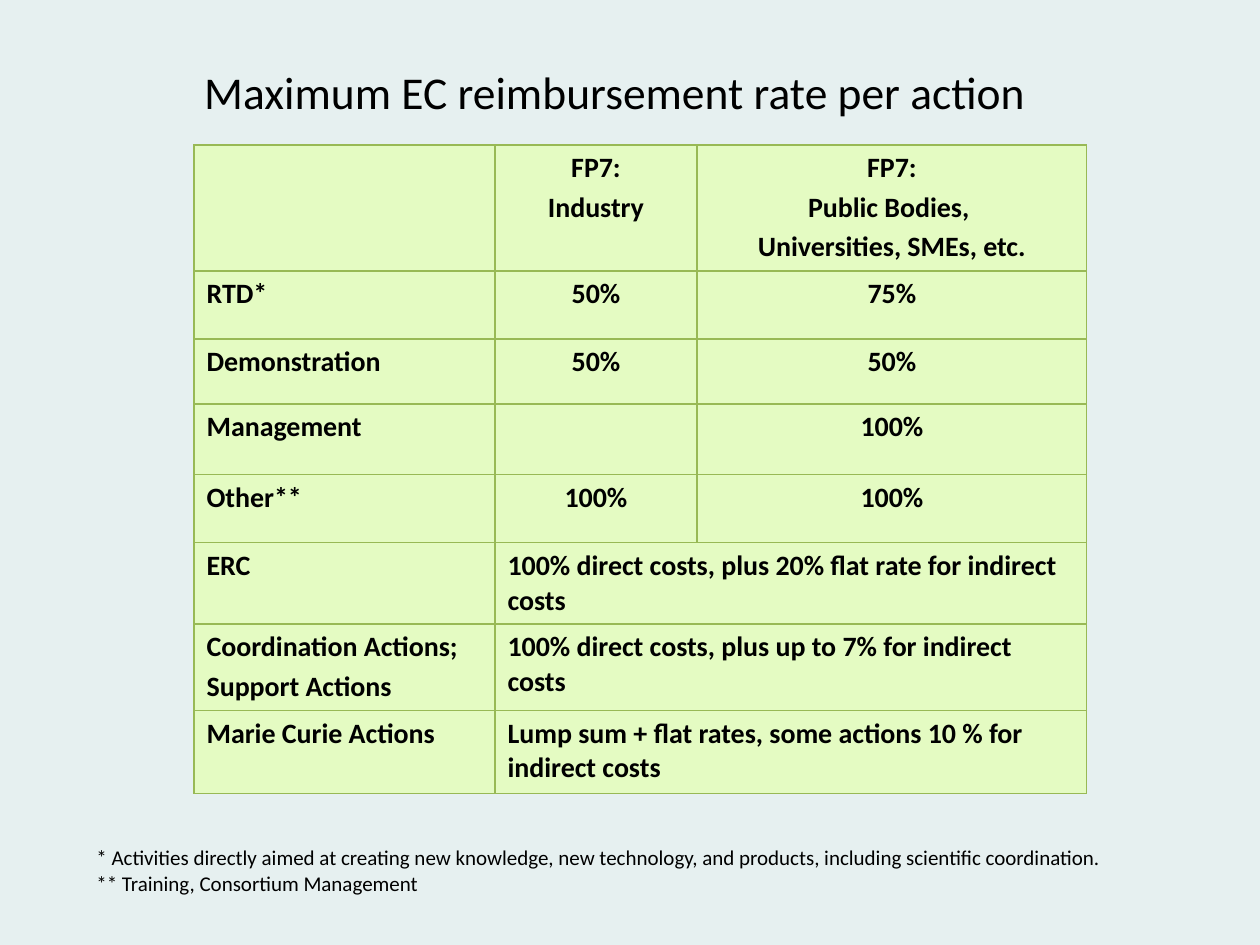
from lxml import etree
from pptx import Presentation
from pptx.dml.color import RGBColor
from pptx.enum.text import MSO_ANCHOR, PP_ALIGN
from pptx.oxml.ns import qn
from pptx.util import Emu, Pt

LEFT, CENTER = PP_ALIGN.LEFT, PP_ALIGN.CENTER
TOP = MSO_ANCHOR.TOP
EMU_PER_PX = 914400 / 126


def px(n):
    return Emu(round(n * EMU_PER_PX))


def rgb(value):
    return RGBColor.from_string(value)


class SlideBuilder:
    font = "Calibri"
    ink = "000000"
    cell_fill = "E4FBC2"
    border = "98B955"
    border_width = Pt(0.75)

    def __init__(self, prs, background):
        self.slide = prs.slides.add_slide(prs.slide_layouts[6])
        fill = self.slide.background.fill
        fill.solid()
        fill.fore_color.rgb = rgb(background)

    def add_lines(self, tf, text, align=LEFT, gap=0, **style):
        """Add one paragraph per line, with a gap between paragraphs."""
        for i, line in enumerate(text.split("\n")):
            p = tf.paragraphs[0] if i == 0 else tf.add_paragraph()
            p.alignment = align
            p.space_before = Pt(gap if i else 0)
            r = p.add_run()
            r.text = line
            for name, value in {"name": self.font, **style}.items():
                setattr(r.font, name, value)
            r.font.color.rgb = rgb(self.ink)

    def text(self, x, y, w, h, text, size, align=LEFT, inset=6):
        tf = self.slide.shapes.add_textbox(px(x), px(y), px(w), px(h)).text_frame
        frame = {"word_wrap": True, "vertical_anchor": TOP,
                 "margin_top": px(inset), "margin_bottom": px(inset)}
        for name, value in frame.items():
            setattr(tf, name, value)
        self.add_lines(tf, text, align, size=Pt(size))

    def style_cell(self, cell):
        tc_pr = cell._tc.get_or_add_tcPr()
        for side in ("lnL", "lnR", "lnT", "lnB"):
            ln = etree.SubElement(tc_pr, qn(f"a:{side}"), w=str(int(self.border_width)))
            solid = etree.SubElement(ln, qn("a:solidFill"))
            etree.SubElement(solid, qn("a:srgbClr"), val=self.border)
        cell.fill.solid()
        cell.fill.fore_color.rgb = rgb(self.cell_fill)

    def table(self, x, y, widths, heights, rows):
        """Draw the rows; a row that is too short merges its last cell rightwards."""
        table = self.slide.shapes.add_table(
            len(rows), len(widths), px(x), px(y),
            px(sum(widths)), px(sum(heights))).table
        for column, width in zip(table.columns, widths):
            column.width = px(width)
        for row, height in zip(table.rows, heights):
            row.height = px(height)
        for cell in table.iter_cells():
            self.style_cell(cell)
        last = len(widths) - 1
        for i, texts in enumerate(rows):
            merged = len(texts) <= last
            if merged:
                table.cell(i, len(texts) - 1).merge(table.cell(i, last))
            for j, text in enumerate(texts):
                if text:
                    align = LEFT if merged or j == 0 else CENTER
                    self.add_lines(table.cell(i, j).text_frame, text, align,
                                   gap=3, size=Pt(16), bold=True)


RATES = [
    ("", "FP7:\nIndustry", "FP7:\nPublic Bodies, \nUniversities, SMEs, etc."),
    ("RTD*", "50%", "75%"),
    ("Demonstration", "50%", "50%"),
    ("Management", "", "100%"),
    ("Other**", "100%", "100%"),
    ("ERC", "100% direct costs, plus 20% flat rate for indirect costs"),
    ("Coordination Actions;\nSupport Actions",
     "100% direct costs, plus up to 7% for indirect costs"),
    ("Marie Curie Actions",
     "Lump sum + flat rates, some actions 10 % for indirect costs"),
]
FOOTNOTES = (
    "* Activities directly aimed at creating new knowledge, new technology, "
    "and products, including scientific coordination.\n"
    "** Training, Consortium Management"
)


def main():
    prs = Presentation()
    prs.slide_width, prs.slide_height = px(1260), px(945)
    s = SlideBuilder(prs, "E6F0F0")

    # Reimbursement rates
    s.table(194, 145, [301, 202, 390], [126, 68, 65, 71, 68, 81, 86, 83], RATES)

    # Footnotes
    s.text(84, 839, 1129, 63, FOOTNOTES, 12)

    # Title
    s.text(164, 64, 902, 56, "Maximum EC reimbursement rate per action", 26,
           CENTER, inset=0)

    prs.save("out.pptx")


if __name__ == "__main__":
    main()
